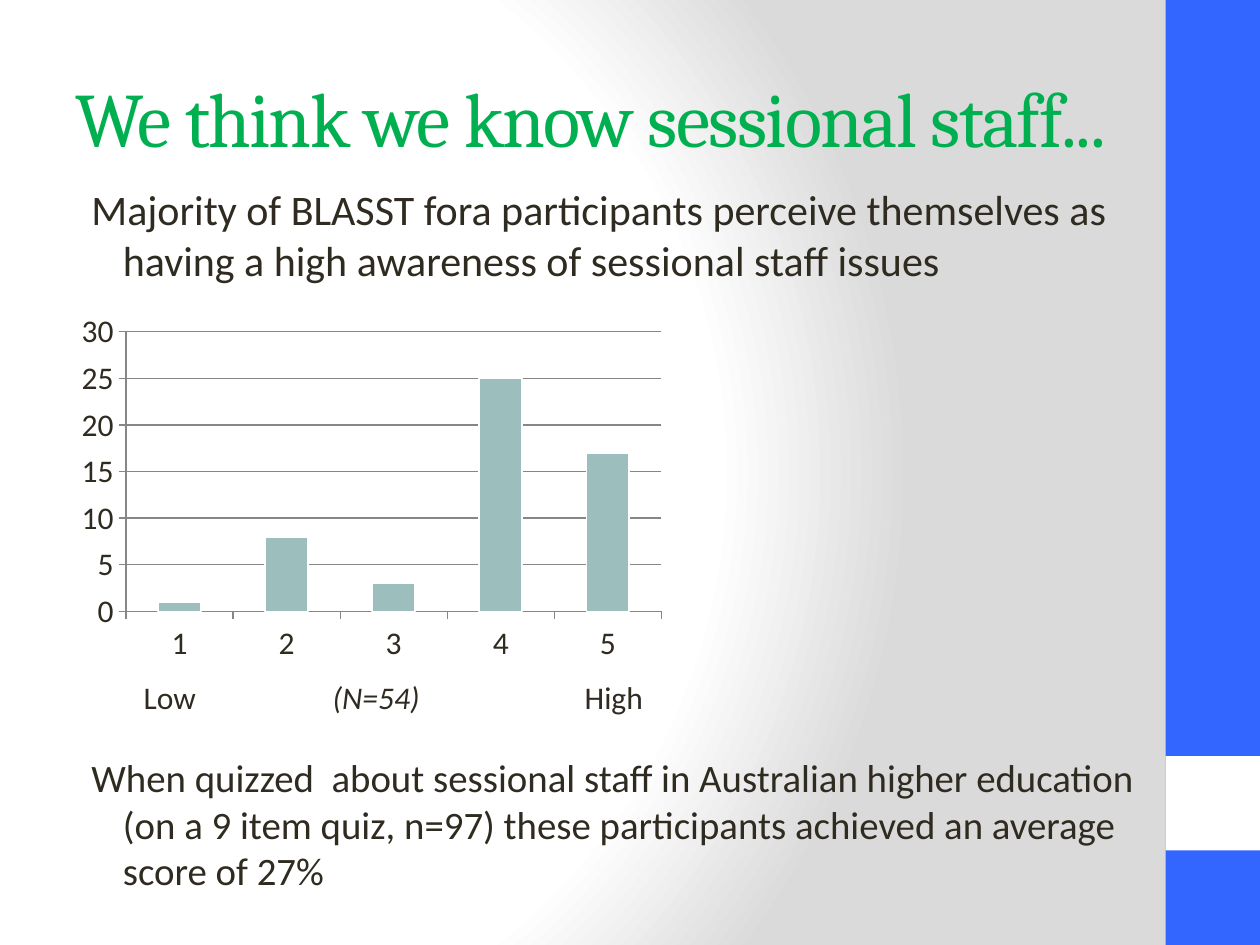
"""Build the slide on what forum participants know about sessional staff."""
from lxml import etree
from pptx import Presentation
from pptx.chart.data import CategoryChartData
from pptx.dml.color import RGBColor
from pptx.enum.chart import XL_CHART_TYPE, XL_TICK_MARK
from pptx.enum.shapes import MSO_SHAPE
from pptx.enum.text import MSO_ANCHOR, MSO_AUTO_SIZE, PP_ALIGN
from pptx.oxml import parse_xml
from pptx.oxml.ns import nsdecls, qn
from pptx.util import Pt

BLUE = RGBColor(0x33, 0x66, 0xFF)
WHITE = RGBColor(0xFF, 0xFF, 0xFF)
GREEN = RGBColor(0x00, 0xB0, 0x50)
DARK = RGBColor(0x2F, 0x2B, 0x20)
TEAL = RGBColor(0x9C, 0xBE, 0xBD)
GREY = RGBColor(0x86, 0x86, 0x86)


def place(shape, left, top, width, height):
    shape.left, shape.top = Pt(left), Pt(top)
    shape.width, shape.height = Pt(width), Pt(height)


def style(font, name, size, color):
    font.name, font.size = name, Pt(size)
    font.color.rgb = color


prs = Presentation()
prs.slide_width, prs.slide_height = Pt(720), Pt(540)
slide = prs.slides.add_slide(prs.slide_layouts[3])

stops = "".join(
    f'<a:gs pos="{pos * 1000}"><a:srgbClr val="{color}"/></a:gs>'
    for pos, color in [(0, "FFFFFF"), (75, "FFFFFF"), (100, "DADADA")]
)
slide.element.cSld.insert(0, parse_xml(
    f'<p:bg {nsdecls("p", "a")}><p:bgPr><a:gradFill><a:gsLst>{stops}</a:gsLst>'
    '<a:path path="circle"><a:fillToRect l="20000" t="50000" r="100000" b="50000"/>'
    '</a:path></a:gradFill><a:effectLst/></p:bgPr></p:bg>'
))

for order, (top, height, color) in enumerate([(0, 540, BLUE), (432, 54, WHITE)]):
    band = slide.shapes.add_shape(
        MSO_SHAPE.RECTANGLE, Pt(666), Pt(top), Pt(54), Pt(height))
    band.shadow.inherit = False
    band.fill.solid()
    band.fill.fore_color.rgb = color
    band.line.fill.background()
    slide.shapes.element.insert(2 + order, band.element)

title = slide.shapes.title
place(title, 36, 21.6, 642, 90)
frame = title.text_frame
frame.text = "We think we know sessional staff..."
frame.auto_size = MSO_AUTO_SIZE.NONE
frame.vertical_anchor = MSO_ANCHOR.MIDDLE
frame.paragraphs[0].alignment = PP_ALIGN.LEFT
run = frame.paragraphs[0].runs[0]
style(run.font, "Cambria", 44, GREEN)
run.font._element.set("spc", "-100")

BODIES = [
    (1, 101.5, 311, 24, "Majority of BLASST fora participants perceive themselves "
     "as having a high awareness of sessional staff issues"),
    (2, 427, 78, 22.2, "When quizzed  about sessional staff in Australian higher "
     "education (on a 9 item quiz, n=97) these participants achieved an average "
     "score of 27%"),
]
for idx, top, height, size, text in BODIES:
    body = slide.placeholders[idx]
    place(body, 36, top, 627, height)
    frame = body.text_frame
    frame.text = text
    frame.auto_size = MSO_AUTO_SIZE.NONE
    para = frame.paragraphs[0]
    props = para._p.get_or_add_pPr()
    props.set("marL", str(Pt(27)))
    props.set("indent", str(Pt(-18)))
    etree.SubElement(props, qn("a:buNone"))
    para.space_before = Pt(0)
    style(para.runs[0].font, "Calibri", size, DARK)

data = CategoryChartData()
data.categories = ["1", "2", "3", "4", "5"]
data.add_series("Series 1", [1, 8, 3, 25, 17])
chart = slide.shapes.add_chart(
    XL_CHART_TYPE.COLUMN_CLUSTERED, Pt(36), Pt(168), Pt(360), Pt(216), data).chart
chart.has_legend = chart.has_title = False
style(chart.font, "Calibri", 18, DARK)
plot = chart.plots[0]
plot.gap_width = 150
plot.vary_by_categories = False
bars = plot.series[0].format
bars.fill.solid()
bars.fill.fore_color.rgb = TEAL
bars.line.color.rgb = WHITE
bars.line.width = Pt(1)

value = chart.value_axis
value.minimum_scale, value.maximum_scale, value.major_unit = 0, 30, 5
value.has_major_gridlines = True
for axis in (chart.category_axis, value):
    axis.major_tick_mark = XL_TICK_MARK.OUTSIDE
for item in (chart.category_axis, value, value.major_gridlines):
    item.format.line.color.rgb = GREY
    item.format.line.width = Pt(0.75)

area = chart._chartSpace.find(".//" + qn("c:plotArea"))
for old in area.findall(qn("c:layout")):
    area.remove(old)
box = "".join(
    f'<c:{tag} val="{val}"/>' for tag, val in [
        ("layoutTarget", "inner"), ("xMode", "edge"), ("yMode", "edge"),
        ("x", 0.1), ("y", 0.1), ("w", 0.85), ("h", 0.74)]
)
area.insert(0, parse_xml(
    f'<c:layout {nsdecls("c")}><c:manualLayout>{box}</c:manualLayout></c:layout>'))

scale = slide.shapes.add_textbox(Pt(75), Pt(384), Pt(300), Pt(29))
scale.text_frame.word_wrap = True
para = scale.text_frame.paragraphs[0]
tabs = etree.SubElement(para._p.get_or_add_pPr(), qn("a:tabLst"))
for pos in (108, 252):
    etree.SubElement(tabs, qn("a:tab"), pos=str(Pt(pos)), algn="l")
for text, slant in [("Low\t", False), ("(N=54)\t", True), ("High", False)]:
    run = para.add_run()
    run.text = text
    style(run.font, "Calibri", 18, DARK)
    run.font.italic = slant

prs.save("out.pptx")
